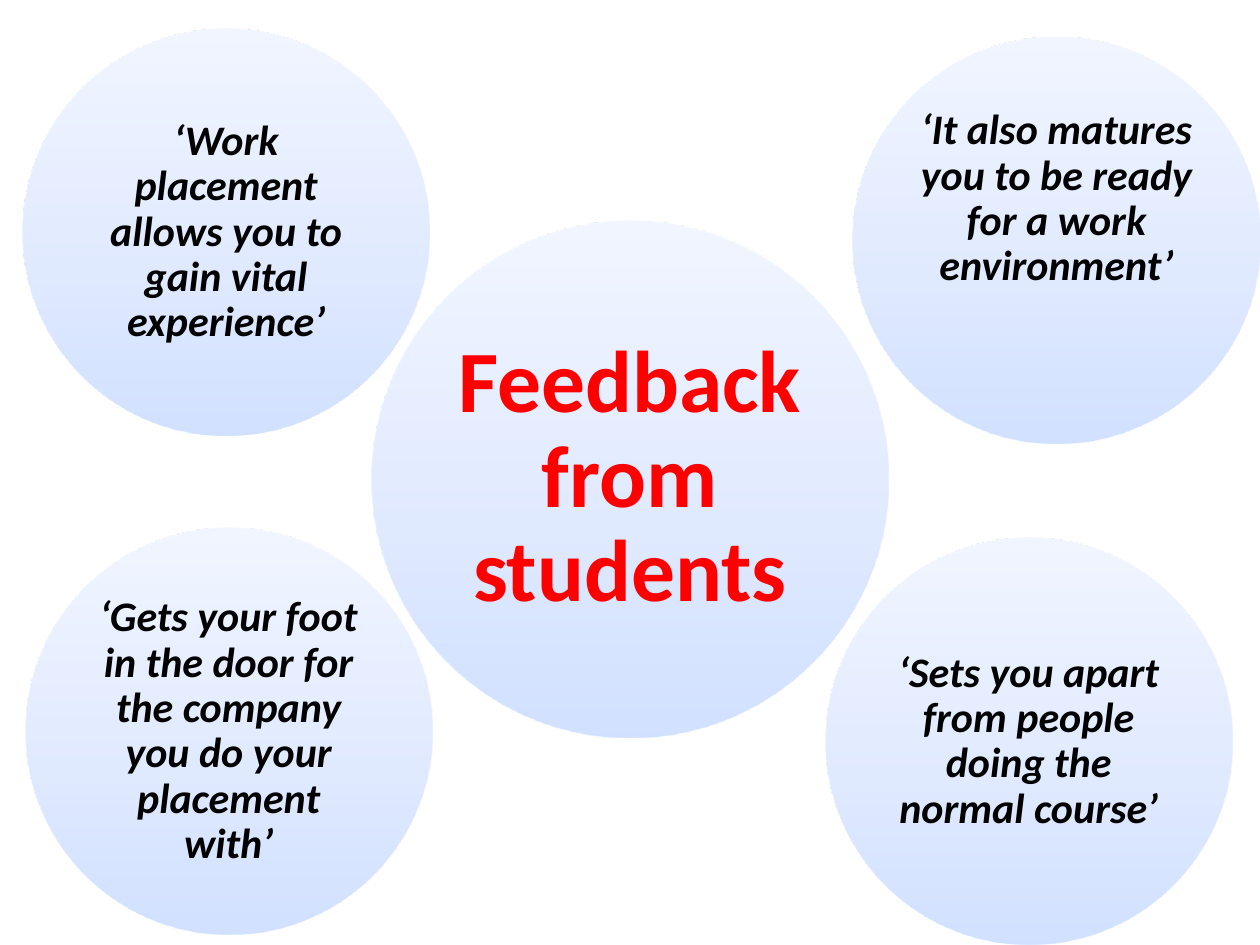
from lxml import etree
from pptx import Presentation
from pptx.dml.color import RGBColor
from pptx.enum import shapes, text
from pptx.oxml import ns
from pptx.util import Pt

RED = RGBColor(0xFF, 0x00, 0x00)
BLACK = RGBColor(0x00, 0x00, 0x00)
STOPS = [
    (0, RGBColor(0xA4, 0xC4, 0xFF)),
    (35, RGBColor(0xBF, 0xD4, 0xFF)),
    (100, RGBColor(0xE6, 0xEE, 0xFF)),
]
QUOTE_SIZE = 232.56
QUOTES = [
    (487.44, 20.88, 49, "‘It also matures you to be ready for a work environment’"),
    (471.6, 307.44, 2.4, "‘Sets you apart from people doing the normal course’"),
    (14.4, 301.68, 2.4, "‘Gets your foot in the door for the company you do your placement with’"),
    (12.96, 16.56, 2.4, "‘Work placement allows you to gain vital experience’"),
]


def add_circle(s, left, top, size):
    sp = s.shapes.add_shape(shapes.MSO_SHAPE.OVAL, Pt(left), Pt(top), Pt(size), Pt(size))
    sp.shadow.inherit = False
    sp.line.fill.background()
    sp.fill.gradient()
    sp.fill.gradient_angle = 90
    stops = sp._element.spPr.find(".//" + ns.qn("a:gsLst"))
    stops.clear()
    for pos, color in STOPS:
        gs = etree.SubElement(stops, ns.qn("a:gs"), pos=str(pos * 1000))
        clr = etree.SubElement(gs, ns.qn("a:srgbClr"), val=str(color))
        etree.SubElement(clr, ns.qn("a:alpha"), val="50000")
    return sp


def set_text(sp, words, size, color, italic, margin, bottom):
    tf = sp.text_frame
    tf.text = words
    tf.word_wrap = True
    tf.auto_size = text.MSO_AUTO_SIZE.NONE
    tf.vertical_anchor = text.MSO_ANCHOR.MIDDLE
    tf.margin_left = tf.margin_right = tf.margin_top = Pt(margin)
    tf.margin_bottom = Pt(bottom)
    p = tf.paragraphs[0]
    p.alignment = text.PP_ALIGN.CENTER
    p.line_spacing = 0.9
    p.space_before = Pt(0)
    p.font.name = "Calibri"
    p.font.size = Pt(size)
    p.font.bold = True
    p.font.italic = italic
    p.font.color.rgb = color


prs = Presentation()
prs.slide_width, prs.slide_height = Pt(720), Pt(540)
s = prs.slides.add_slide(prs.slide_layouts[5])

add_circle(s, 212.4, 126, 295.2)
title = s.shapes.title
title.left, title.top = Pt(255.6), Pt(169.2)
title.width = title.height = Pt(208.8)
set_text(title, "Feedback from students", 50, RED, False, 5, 5)
s.shapes._spTree.append(title._element)

for left, top, bottom, words in QUOTES:
    sp = add_circle(s, left, top, QUOTE_SIZE)
    set_text(sp, words, 24, BLACK, True, 2.4, bottom)

prs.save("out.pptx")
